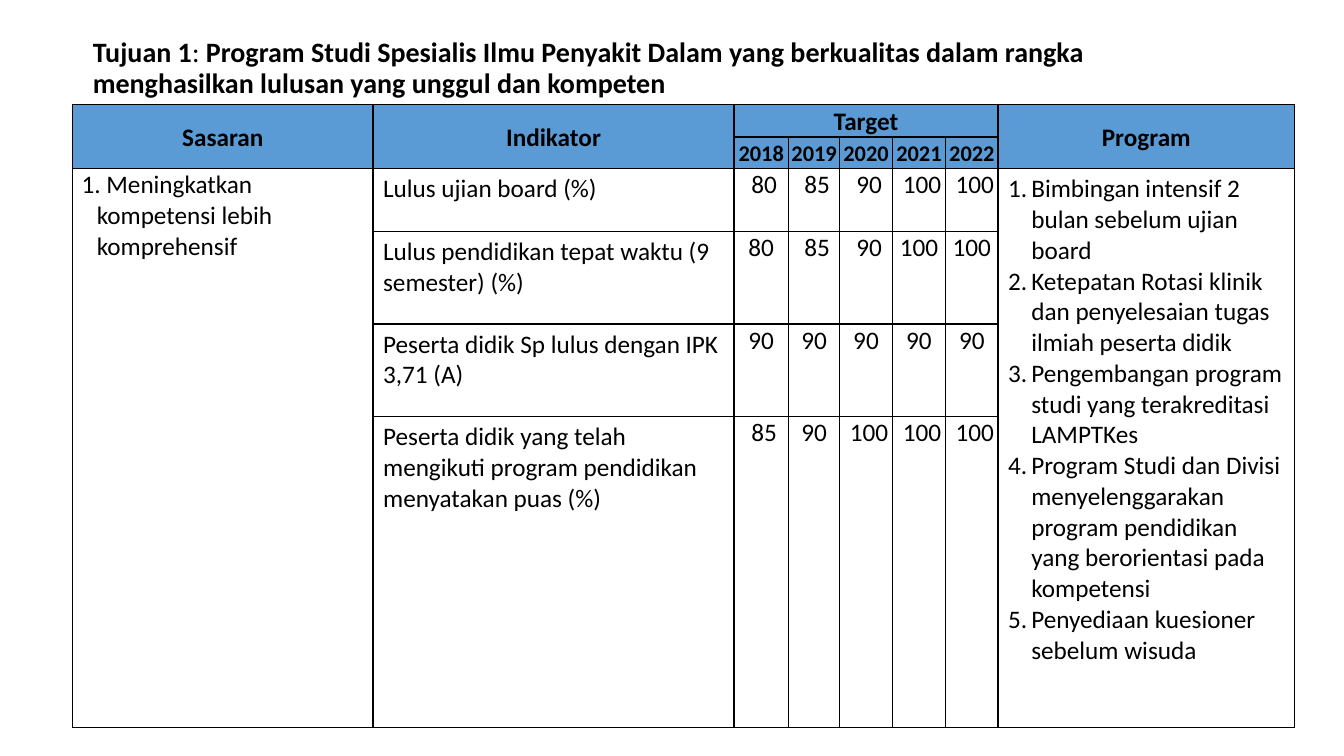
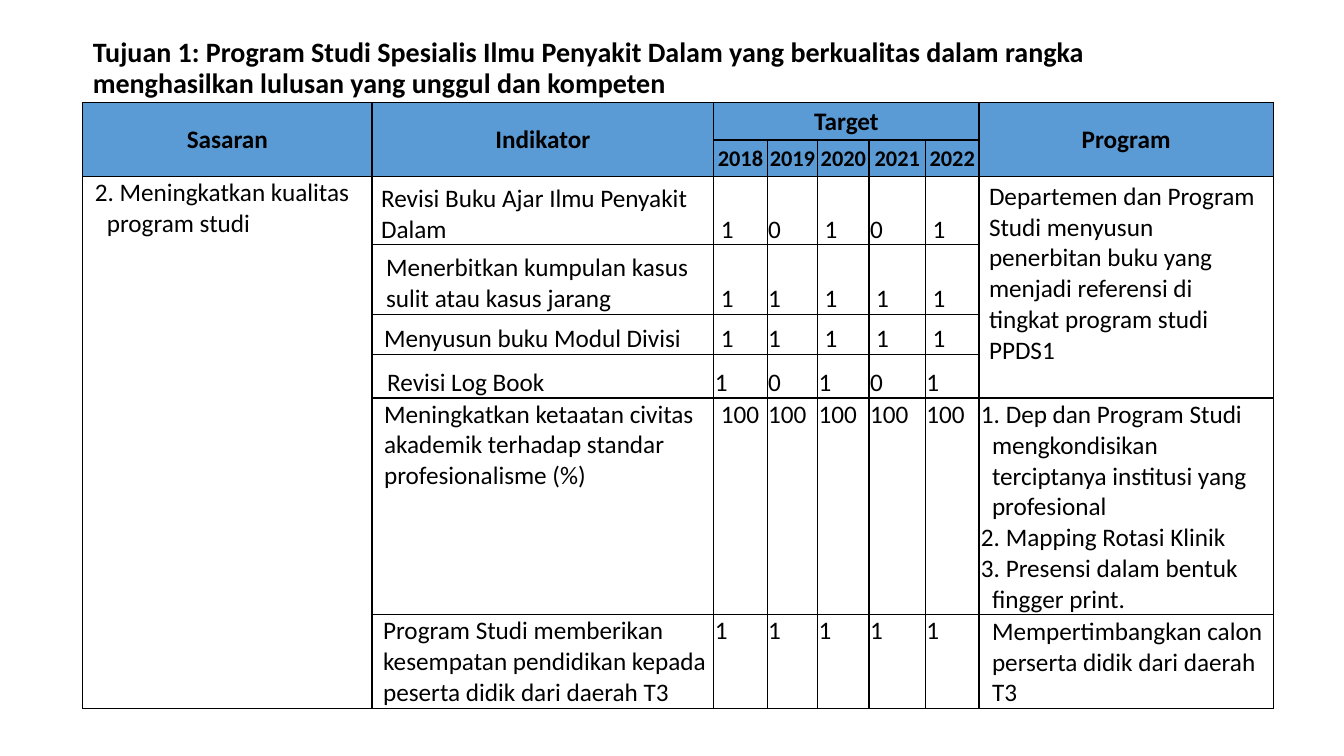
from lxml.etree import SubElement
from pptx import Presentation
from pptx.dml.color import RGBColor
from pptx.enum.text import MSO_ANCHOR, PP_ALIGN
from pptx.oxml.ns import qn
from pptx.util import Pt

PX = 9144  # 100 px to the inch
LEFT, CENTER = PP_ALIGN.LEFT, PP_ALIGN.CENTER
TOP, MID, LOW = MSO_ANCHOR.TOP, MSO_ANCHOR.MIDDLE, MSO_ANCHOR.BOTTOM
COLORS = {"text": "000000", "line": "000000", "head": "5B9BD5"}
FONT = "Calibri"
TIGHT, ROOMY = (1, 1, 1, 0), (10, 5, 10, 5)  # left, top, right, bottom
TITLE_BOX = (82, 33, 1150, 71)
TITLE = ("Tujuan 1", ": ", "Program Studi Spesialis Ilmu Penyakit Dalam yang "
         "berkualitas dalam rangka menghasilkan lulusan yang unggul dan kompeten")
HEADS = {0: "Sasaran", 1: "Indikator", 7: "Program"}
YEARS = (2018, 2019, 2020, 2021, 2022)
FIRST, LAST = 2, 7  # first year column, program column

# rows: height, indicator, its indent, values, indents of values, anchor
# programs: first row, last row, paragraphs, indents, padding, anchor, numbered
SLIDES = [
    {
        "colon": False, "at": (72, 104), "heads": (32, 31), "align": CENTER,
        "cols": (298, 358, 54, 51, 52, 53, 52, 294), "pad": ROOMY,
        "goal": "1. Meningkatkan kompetensi lebih komprehensif",
        "hang": (23, -15),
        "rows": [
            (62, "Lulus ujian board (%)", 0,
             (80, 85, 90, 100, 100), (6, 6, 6, 6, 6), TOP),
            (92, "Lulus pendidikan tepat waktu (9 semester) (%)", 0,
             (80, 85, 90, 100, 100), (0, 6, 6, 0, 0), TOP),
            (92, "Peserta didik Sp lulus dengan IPK 3,71 (A)", 0,
             (90, 90, 90, 90, 90), (0, 0, 0, 0, 0), TOP),
            (308, "Peserta didik yang telah mengikuti program pendidikan "
             "menyatakan puas (%)", 0,
             (85, 90, 100, 100, 100), (6, 0, 6, 6, 6), TOP),
        ],
        "programs": [
            (2, 5, ["Bimbingan intensif 2 bulan sebelum ujian board",
                    "Ketepatan Rotasi klinik dan penyelesaian tugas ilmiah "
                    "peserta didik",
                    "Pengembangan program studi yang terakreditasi LAMPTKes",
                    "Program Studi dan Divisi menyelenggarakan program "
                    "pendidikan yang berorientasi pada kompetensi",
                    "Penyediaan kuesioner sebelum wisuda"],
             (23, -23), ROOMY, TOP, True),
        ],
    },
    {
        "colon": True, "at": (82, 102), "heads": (37, 36), "align": LEFT,
        "cols": (287, 339, 53, 50, 51, 56, 53, 292), "pad": TIGHT,
        "goal": "2. Meningkatkan kualitas program studi",
        "hang": (23, -12),
        "rows": [
            (68, "Revisi Buku Ajar Ilmu Penyakit Dalam", 8,
             (1, 0, 1, 0, 1), (6, 0, 6, 0, 6), LOW),
            (69, "Menerbitkan kumpulan kasus sulit atau kasus jarang", 13,
             (1, 1, 1, 1, 1), (6, 0, 6, 6, 6), LOW),
            (40, "Menyusun buku Modul Divisi", 11,
             (1, 1, 1, 1, 1), (6, 0, 6, 6, 6), LOW),
            (43, "Revisi Log Book", 14,
             (1, 0, 1, 0, 1), (0, 0, 0, 0, 0), LOW),
            (215, "Meningkatkan ketaatan civitas akademik terhadap standar "
             "profesionalisme (%)", 11,
             (100, 100, 100, 100, 100), (6, 0, 0, 0, 0), TOP),
            (93, "Program Studi memberikan kesempatan pendidikan kepada "
             "peserta didik dari daerah T3", 10,
             (1, 1, 1, 1, 1), (0, 0, 0, 0, 0), TOP),
        ],
        "programs": [
            (2, 5, ["Departemen dan Program Studi menyusun penerbitan buku yang "
                    "menjadi referensi di tingkat program studi PPDS1"],
             (0, 0), ROOMY, TOP, False),
            (6, 6, ["1. Dep dan Program Studi mengkondisikan terciptanya "
                    "institusi yang profesional",
                    "2. Mapping Rotasi Klinik",
                    "3. Presensi dalam bentuk fingger print."],
             (12, -11), TIGHT, LOW, False),
            (7, 7, ["Mempertimbangkan calon perserta didik dari daerah T3"],
             (12, 0), TIGHT, LOW, False),
        ],
    },
]


def color(name):
    return RGBColor.from_string(COLORS[name])


def style(font, size, bold):
    font.name, font.size, font.bold = FONT, Pt(size), bold
    font.color.rgb = color("text")


def frame(cell):
    """Draw the four borders of a cell."""
    props = cell._tc.get_or_add_tcPr()
    for side in ("lnL", "lnR", "lnT", "lnB"):
        line = SubElement(props, qn("a:" + side), w=str(Pt(1)))
        fill = SubElement(line, qn("a:solidFill"))
        SubElement(fill, qn("a:srgbClr"), val=COLORS["line"])


def write(cell, lines, align=LEFT, anchor=TOP, pad=TIGHT, hang=(0, 0),
          size=18, bold=False, number=False):
    cell.vertical_anchor = anchor
    (cell.margin_left, cell.margin_top,
     cell.margin_right, cell.margin_bottom) = [n * PX for n in pad]
    text = cell.text_frame
    text.text = "\n".join(lines)
    for para in text.paragraphs:
        para.alignment = align
        props = para._p.get_or_add_pPr()
        props.set("marL", str(hang[0] * PX))
        props.set("indent", str(hang[1] * PX))
        if number:
            SubElement(props, qn("a:buFont"), typeface="+mj-lt")
            SubElement(props, qn("a:buAutoNum"), type="arabicPeriod")
        style(para.font, size, bold)


def add_title(slide, colon):
    title = slide.shapes.title
    title.left, title.top, title.width, title.height = [n * PX for n in TITLE_BOX]
    text = title.text_frame
    text.word_wrap, text.vertical_anchor = True, MID
    para = text.paragraphs[0]
    para.alignment, para.line_spacing = LEFT, 0.9
    for part, bold in zip(TITLE, (True, colon, True)):
        run = para.add_run()
        run.text = part
        style(run.font, 20, bold)


def add_heads(table):
    def head(cell, label, size=18):
        write(cell, [str(label)], CENTER, MID, size=size, bold=True)

    for col, label in HEADS.items():
        table.cell(0, col).merge(table.cell(1, col))
        head(table.cell(0, col), label)
    table.cell(0, FIRST).merge(table.cell(0, LAST - 1))
    head(table.cell(0, FIRST), "Target")
    for col, year in enumerate(YEARS, FIRST):
        head(table.cell(1, col), year, 16)


def add_grid(slide, data):
    highs = data["heads"] + tuple(row[0] for row in data["rows"])
    wides = data["cols"]
    box = [n * PX for n in (*data["at"], sum(wides), sum(highs))]
    table = slide.shapes.add_table(len(highs), len(wides), *box).table
    table.first_row = table.horz_banding = False
    for col, wide in zip(table.columns, wides):
        col.width = wide * PX
    for row, high in zip(table.rows, highs):
        row.height = high * PX
    for row in range(len(highs)):
        for col in range(len(wides)):
            cell = table.cell(row, col)
            frame(cell)
            if row < 2:
                cell.fill.solid()
                cell.fill.fore_color.rgb = color("head")
            else:
                cell.fill.background()
    add_heads(table)
    table.cell(2, 0).merge(table.cell(len(highs) - 1, 0))
    write(table.cell(2, 0), [data["goal"]], hang=data["hang"])
    for row, (_, label, dent, vals, shifts, anchor) in enumerate(data["rows"], 2):
        write(table.cell(row, 1), [label], anchor=anchor, pad=data["pad"],
              hang=(dent, 0))
        for col, (val, shift) in enumerate(zip(vals, shifts), FIRST):
            write(table.cell(row, col), [str(val)], data["align"], anchor,
                  hang=(shift, 0))
    for start, end, lines, hang, pad, anchor, number in data["programs"]:
        cell = table.cell(start, LAST)
        if end > start:
            cell.merge(table.cell(end, LAST))
        write(cell, lines, anchor=anchor, pad=pad, hang=hang, number=number)


def main():
    deck = Presentation()
    deck.slide_width, deck.slide_height = 1333 * PX, 750 * PX
    for data in SLIDES:
        slide = deck.slides.add_slide(deck.slide_layouts[5])
        add_grid(slide, data)
        add_title(slide, data["colon"])
    deck.save("out.pptx")


if __name__ == "__main__":
    main()
